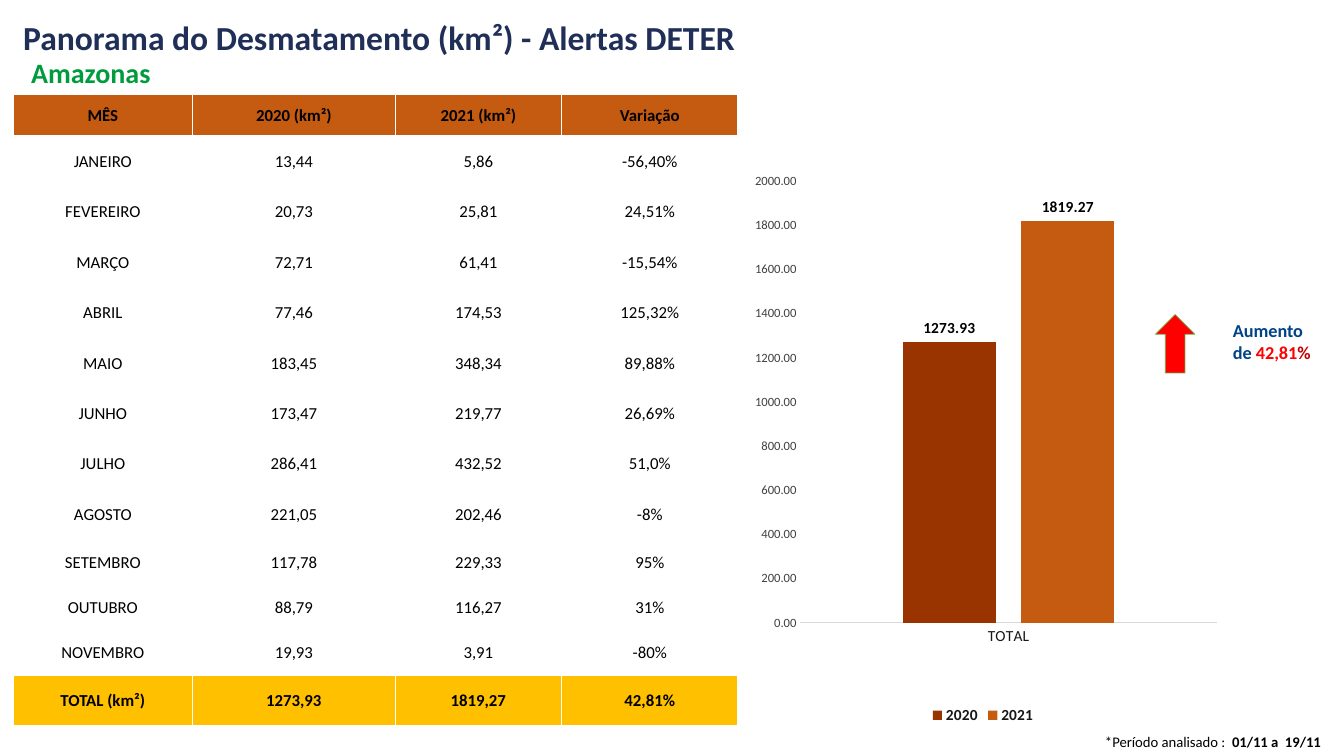
import pptx
import pptx.util
import pptx.chart.data
import pptx.dml.color
import pptx.enum.chart
import pptx.enum.shapes
import pptx.enum.text
import pptx.oxml
import pptx.oxml.ns

Inches = pptx.util.Inches
Pt = pptx.util.Pt
RGBColor = pptx.dml.color.RGBColor
Align = pptx.enum.text.PP_ALIGN

FONT = "Calibri"
NAVY = RGBColor(0x20, 0x2F, 0x58)
GREEN = RGBColor(0x00, 0x9B, 0x3D)
BLUE = RGBColor(0x00, 0x43, 0x86)
RED = RGBColor(0xFF, 0x00, 0x00)
DARK_RED = RGBColor(0xC0, 0x00, 0x00)
LIME = RGBColor(0x70, 0xAD, 0x47)
BROWN = RGBColor(0x99, 0x33, 0x00)
ORANGE = RGBColor(0xC5, 0x5A, 0x11)
GOLD = RGBColor(0xFF, 0xC0, 0x00)
WHITE = RGBColor(0xFF, 0xFF, 0xFF)
BLACK = RGBColor(0x00, 0x00, 0x00)
INK = RGBColor(0x18, 0x17, 0x17)
GREY = RGBColor(0x40, 0x40, 0x40)
PALE = RGBColor(0xD9, 0xD9, 0xD9)

WIDTHS = [1.78, 2.01, 1.65, 1.75]
HEIGHTS = [0.41] + [0.5] * 8 + [0.45] * 3 + [0.5]
ROWS = [
    ("MÊS", "2020 (km²)", "2021 (km²)", "Variação"),
    ("JANEIRO", "13,44", "5,86", "-56,40%"),
    ("FEVEREIRO", "20,73", "25,81", "24,51%"),
    ("MARÇO", "72,71", "61,41", "-15,54%"),
    ("ABRIL", "77,46", "174,53", "125,32%"),
    ("MAIO", "183,45", "348,34", "89,88%"),
    ("JUNHO", "173,47", "219,77", "26,69%"),
    ("JULHO", "286,41", "432,52", "51,0%"),
    ("AGOSTO", "221,05", "202,46", "-8%"),
    ("SETEMBRO", "117,78", "229,33", "95%"),
    ("OUTUBRO", "88,79", "116,27", "31%"),
    ("NOVEMBRO", "19,93", "3,91", "-80%"),
    ("TOTAL (km²)", "1273,93", "1819,27", "42,81%"),
]
TOTALS = [("2020", 1273.93, BROWN), ("2021", 1819.27, ORANGE)]
PLOT = {"x": 0.118, "y": 0.047, "w": 0.871, "h": 0.769}


def style(font, size, color, bold=False):
    font.name = FONT
    font.size = Pt(size)
    font.bold = bold
    font.color.rgb = color


def add_text(slide, box, size, lines, align=Align.LEFT, wrap=False):
    frame = slide.shapes.add_textbox(*map(Inches, box)).text_frame
    frame.word_wrap = wrap
    frame.auto_size = pptx.enum.text.MSO_AUTO_SIZE.SHAPE_TO_FIT_TEXT
    for i, line in enumerate(lines):
        para = frame.add_paragraph() if i else frame.paragraphs[0]
        para.alignment = align
        for text, color, bold in line:
            run = para.add_run()
            run.text = text
            style(run.font, size, color, bold)


def fill_cell(cell, text, color, bold):
    cell.fill.solid()
    cell.fill.fore_color.rgb = color
    cell.margin_left = cell.margin_right = cell.margin_top = Inches(0.01)
    cell.margin_bottom = 0
    cell.vertical_anchor = pptx.enum.text.MSO_ANCHOR.MIDDLE
    para = cell.text_frame.paragraphs[0]
    para.text = text
    para.alignment = Align.CENTER
    style(para.runs[0].font, 12, BLACK, bold)


def add_table(slide):
    box = (0.13, 0.94, sum(WIDTHS), sum(HEIGHTS))
    table = slide.shapes.add_table(len(ROWS), len(WIDTHS), *map(Inches, box)).table
    table.first_row = False
    table.horz_banding = False
    for col, width in zip(table.columns, WIDTHS):
        col.width = Inches(width)
    fills = [ORANGE] + [WHITE] * (len(ROWS) - 2) + [GOLD]
    for row, height, texts, color in zip(table.rows, HEIGHTS, ROWS, fills):
        row.height = Inches(height)
        for cell, text in zip(row.cells, texts):
            fill_cell(cell, text, color, color != WHITE)


def set_plot(chart):
    area = chart._chartSpace.chart.plotArea
    for old in area.findall(pptx.oxml.ns.qn("c:layout")):
        area.remove(old)
    sides = "".join(f'<c:{k} val="{v}"/>' for k, v in PLOT.items())
    area.insert(0, pptx.oxml.parse_xml(
        f'<c:layout {pptx.oxml.ns.nsdecls("c")}><c:manualLayout>'
        '<c:layoutTarget val="inner"/><c:xMode val="edge"/><c:yMode val="edge"/>'
        f'{sides}</c:manualLayout></c:layout>'))


def add_chart(slide):
    kinds = pptx.enum.chart
    data = pptx.chart.data.CategoryChartData(number_format="0.00")
    data.categories = ["TOTAL"]
    for name, value, color in TOTALS:
        data.add_series(name, [value])
    chart = slide.shapes.add_chart(
        kinds.XL_CHART_TYPE.COLUMN_CLUSTERED,
        *map(Inches, (7.38, 1.53, 4.74, 5.7)), data).chart
    style(chart.font, 10, GREY)
    chart.has_title = False
    chart.has_legend = True
    chart.legend.position = kinds.XL_LEGEND_POSITION.BOTTOM
    chart.legend.include_in_layout = False
    style(chart.legend.font, 11, INK, True)
    for axis, size, color in ((chart.category_axis, 11, INK), (chart.value_axis, 9, GREY)):
        axis.major_tick_mark = axis.minor_tick_mark = kinds.XL_TICK_MARK.NONE
        axis.has_major_gridlines = False
        style(axis.tick_labels.font, size, color)
    line = chart.category_axis.format.line
    line.color.rgb = PALE
    line.width = Pt(0.75)
    scale = chart.value_axis
    scale.format.line.fill.background()
    scale.minimum_scale, scale.maximum_scale, scale.major_unit = 0, 2000, 200
    scale.tick_labels.number_format = "0.00"
    scale.tick_labels.number_format_is_linked = False
    plot = chart.plots[0]
    plot.vary_by_categories = False
    plot.gap_width = 219
    plot.overlap = -27
    for bar, (name, value, color) in zip(plot.series, TOTALS):
        bar.format.fill.solid()
        bar.format.fill.fore_color.rgb = color
        tags = bar.data_labels
        tags.show_value = True
        tags.number_format = "0.00"
        tags.number_format_is_linked = False
        tags.position = kinds.XL_LABEL_POSITION.OUTSIDE_END
        style(tags.font, 11, BLACK, True)
    set_plot(chart)


def add_arrow(slide):
    arrow = slide.shapes.add_shape(
        pptx.enum.shapes.MSO_SHAPE.UP_ARROW, *map(Inches, (11.46, 3.12, 0.39, 0.58)))
    arrow.shadow.inherit = False
    arrow.fill.solid()
    arrow.fill.fore_color.rgb = RED
    arrow.line.color.rgb = LIME
    arrow.line.width = Pt(0.5)


def main():
    deck = pptx.Presentation()
    deck.slide_width = Inches(13.33)
    deck.slide_height = Inches(7.5)
    slide = deck.slides.add_slide(deck.slide_layouts[6])
    add_text(slide, (0.13, 0.12, 8.42, 0.5), 24,
             [[("Panorama do Desmatamento (km²) - Alertas DETER", NAVY, True)]])
    add_text(slide, (0.21, 0.5, 1.61, 0.44), 20, [[("Amazonas", GREEN, True)]])
    add_table(slide)
    add_text(slide, (10.82, 7.22, 2.38, 0.28), 10.5,
             [[("*Período analisado :  ", BLACK, False), ("01/11 a  19/11", BLACK, True)]],
             Align.RIGHT)
    add_arrow(slide)
    add_text(slide, (12.13, 3.12, 1.07, 0.54), 13,
             [[("Aumento", BLUE, True)],
              [("de ", BLUE, True), ("42,81", RED, True), ("%", DARK_RED, True)]],
             wrap=True)
    add_chart(slide)
    deck.save("out.pptx")


if __name__ == "__main__":
    main()
